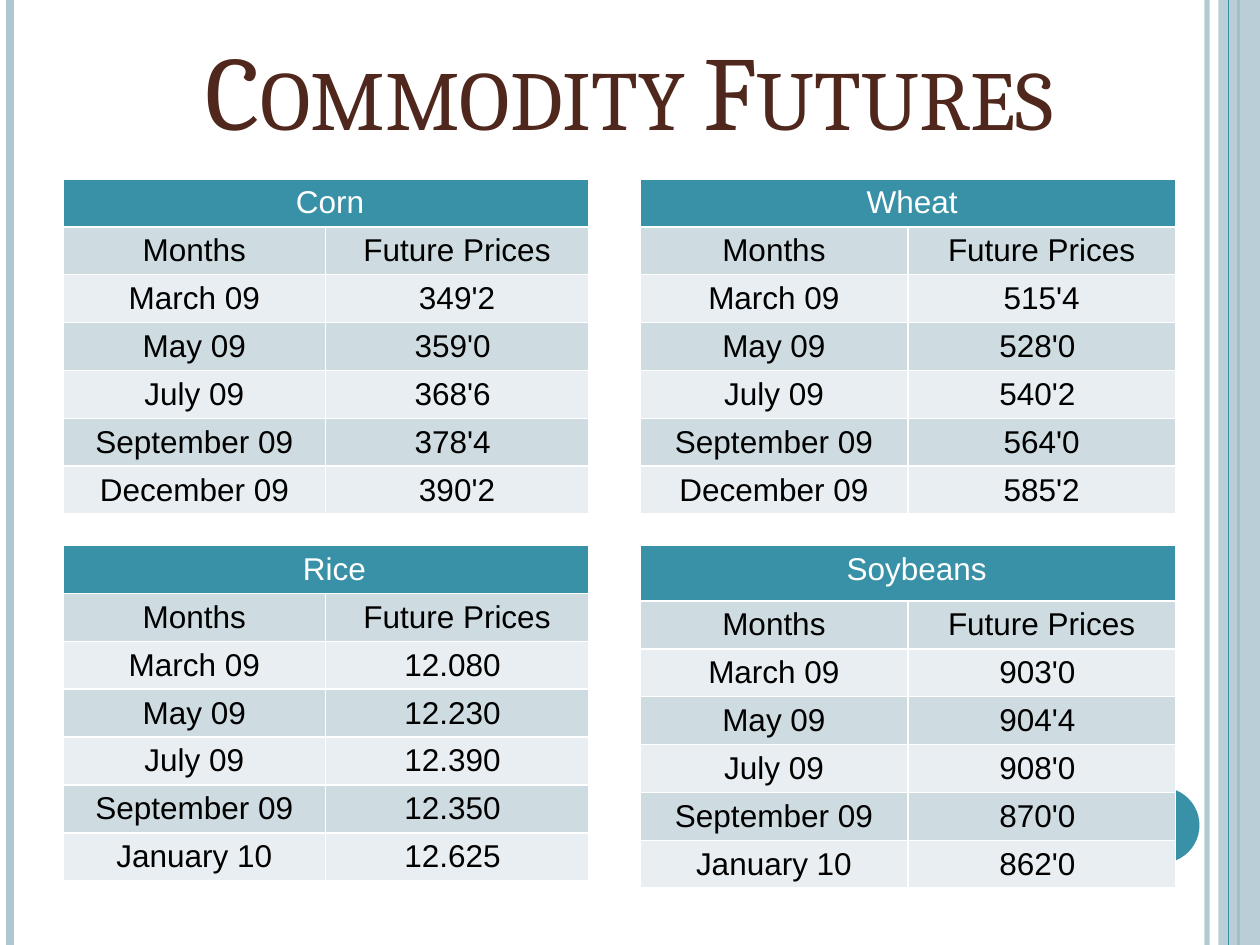
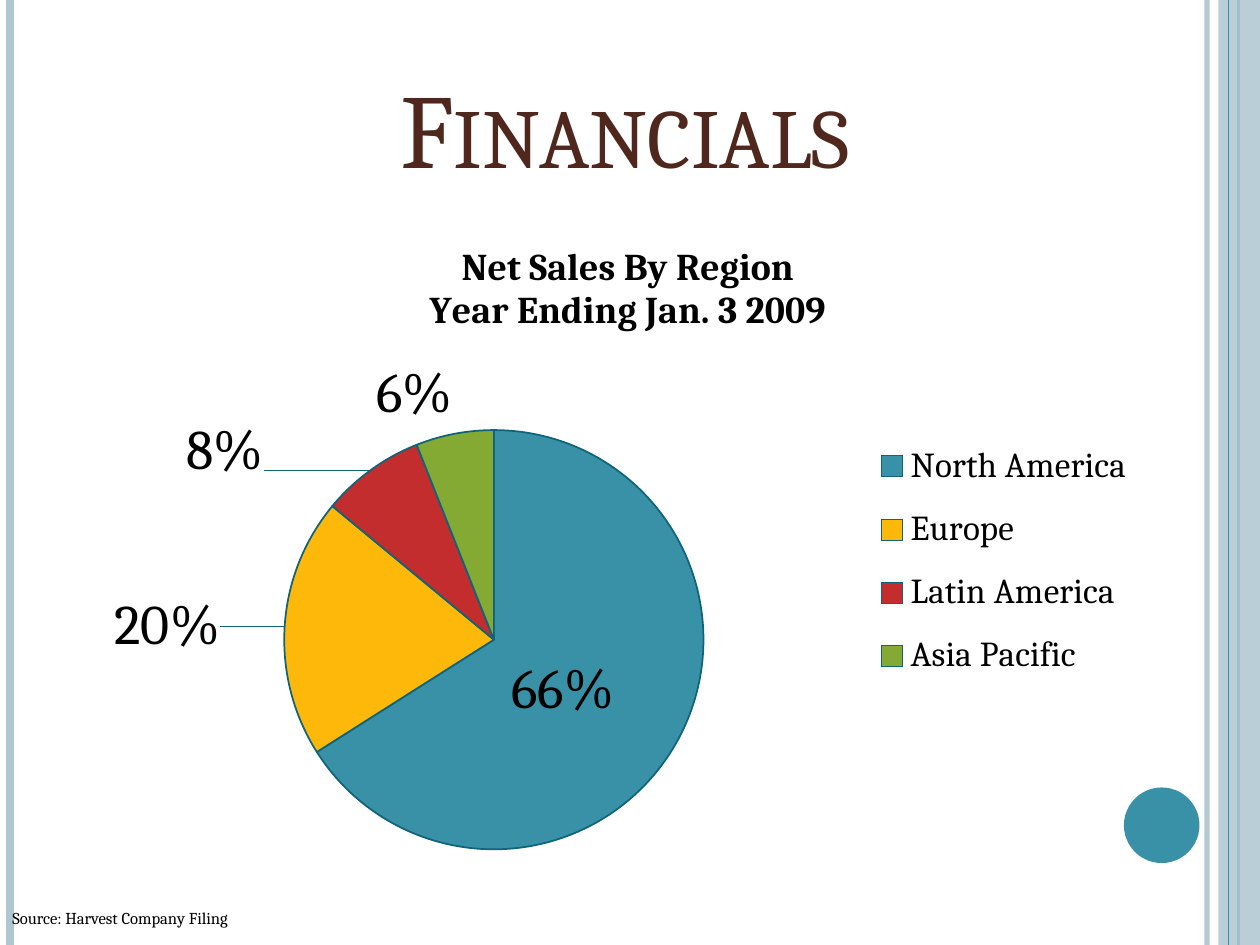
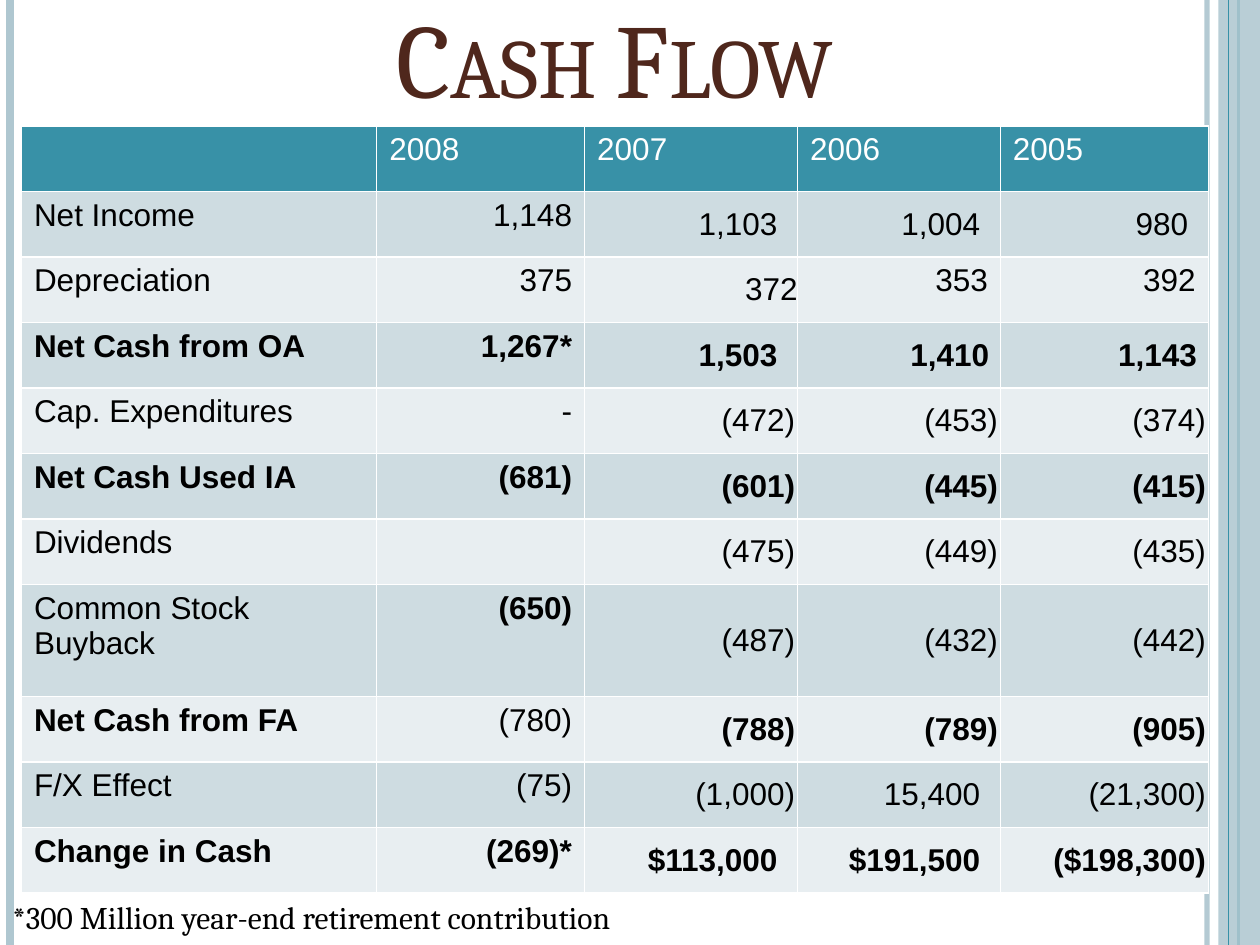
from pptx import Presentation
from pptx.chart.data import CategoryChartData
from pptx.dml.color import RGBColor
from pptx.enum.chart import XL_CHART_TYPE, XL_LABEL_POSITION, XL_LEGEND_POSITION
from pptx.enum.shapes import MSO_CONNECTOR, MSO_SHAPE
from pptx.enum.text import MSO_ANCHOR, PP_ALIGN
from pptx.oxml.ns import qn
from pptx.util import Inches, Pt
from lxml.etree import SubElement

TEAL = RGBColor(0x38, 0x91, 0xA7)
DARK_TEAL = RGBColor(0x0F, 0x64, 0x7A)
PALE_BLUE = RGBColor(0xAF, 0xC7, 0xD0)
BROWN = RGBColor(0x4F, 0x27, 0x1C)
BLACK = RGBColor(0, 0, 0)
WHITE = RGBColor(0xFF, 0xFF, 0xFF)
BANDS = (RGBColor(0xE8, 0xEE, 0xF1), RGBColor(0xCE, 0xDC, 0xE1))
REGION_COLORS = (
    TEAL,
    RGBColor(0xFE, 0xB8, 0x0A),
    RGBColor(0xC3, 0x2D, 0x2E),
    RGBColor(0x84, 0xAA, 0x33),
)

TITLE_FONT = {"name": "Cambria", "size": Pt(60)}
CHART_FONT = {"name": "Cambria", "size": Pt(18)}
CELL_FONT = {"name": "Arial", "size": Pt(18)}
EDGE_LINES = ((9.58, PALE_BLUE, 3, 93), (0.08, PALE_BLUE, 4.5, 100), (9.83, TEAL, 1.5, 100))
ROW_HEIGHT = 0.38

MONTHS = ["March 09", "May 09", "July 09", "September 09"]
COMMODITIES = (
    ("Corn", 0.5, 1.42, 4.17, 0.07, ROW_HEIGHT, "December 09",
     ["349'2", "359'0 ", "368'6 ", "378'4 ", "390'2"]),
    ("Wheat", 5.08, 1.42, 4.25, 0.07, ROW_HEIGHT, "December 09",
     ["515'4", "528'0 ", "540'2 ", "564'0", "585'2"]),
    ("Rice", 0.5, 4.33, 4.17, 0.14, ROW_HEIGHT, "January 10",
     ["12.080 ", "12.230 ", "12.390 ", "12.350 ", "12.625 "]),
    ("Soybeans", 5.08, 4.33, 4.25, 0.14, 0.44, "January 10",
     ["903'0 ", "904'4 ", "908'0 ", "870'0 ", "862'0 "]),
)

CASH_FLOW = (
    ("", "2008", "2007", "2006", "2005"),
    ("Net Income", "1,148", "1,103", "1,004", "980"),
    ("Depreciation", "375", "372", "353", "392"),
    ("Net Cash from OA", "1,267*", "1,503", "1,410", "1,143"),
    ("Cap. Expenditures", "-", "(472)", "(453)", "(374)"),
    ("Net Cash Used IA", "(681)", "(601)", "(445)", "(415)"),
    ("Dividends", "", "(475)", "(449)", "(435)"),
    ("Common Stock Buyback", "(650)", "(487)", "(432)", "(442)"),
    ("Net Cash from FA", "(780)", "(788)", "(789)", "(905)"),
    ("F/X Effect", "(75)", "(1,000)", "15,400", "(21,300)"),
    ("Change in Cash", "(269)*", "$113,000", "$191,500", "($198,300)"),
)
BOLD_EXCEPTIONS = {"(650)": True, "(780)": False}
RIGHT_MARGINS = {"372": 0, "353": 0.1, "392": 0.1, "1,410": 0.09, "1,143": 0.09}
TOP_ANCHORED = ("353", "392")


def apply_format(target, values):
    for name, value in values.items():
        setattr(target, name, value)


def style_font(font, values, color=BLACK):
    apply_format(font, values)
    font.color.rgb = color


def set_alpha(color_parent, percent):
    for color in color_parent.iter(qn("a:srgbClr")):
        SubElement(color, qn("a:alpha"), val=str(percent * 1000))


def add_vertical_line(slide, left, color, width, opacity):
    line = slide.shapes.add_connector(
        MSO_CONNECTOR.STRAIGHT, Inches(left), 0, Inches(left), Inches(7.5))
    line.line.color.rgb = color
    line.line.width = Pt(width)
    if opacity < 100:
        set_alpha(line._element.spPr, opacity)
    SubElement(line._element.spPr, qn("a:effectLst"))


def add_filled_shape(slide, kind, box, color):
    shape = slide.shapes.add_shape(kind, *map(Inches, box))
    shape.shadow.inherit = False
    shape.fill.solid()
    shape.fill.fore_color.rgb = color
    shape.line.fill.background()
    return shape


def add_text(slide, text, box, font, color=BLACK, align=PP_ALIGN.LEFT, anchor=MSO_ANCHOR.TOP):
    frame = slide.shapes.add_textbox(*map(Inches, box)).text_frame
    apply_format(frame, {"word_wrap": True, "vertical_anchor": anchor})
    paragraph = frame.paragraphs[0]
    paragraph.alignment = align
    run = paragraph.add_run()
    run.text = text
    style_font(run.font, font, color)
    return run


def add_framed_slide(presentation, title, title_box):
    slide = presentation.slides.add_slide(presentation.slide_layouts[6])
    for edge_line in EDGE_LINES:
        add_vertical_line(slide, *edge_line)
    band = add_filled_shape(slide, MSO_SHAPE.RECTANGLE, (9.67, 0, 0.33, 7.5), PALE_BLUE)
    set_alpha(band._element.spPr, 87)
    add_vertical_line(slide, 9.75, TEAL, 0.75, 100)
    add_filled_shape(slide, MSO_SHAPE.OVAL, (8.92, 6.25, 0.6, 0.6), TEAL)
    run = add_text(slide, title, title_box, TITLE_FONT, BROWN, PP_ALIGN.CENTER, MSO_ANCHOR.BOTTOM)
    run.font._element.set("cap", "small")
    return slide


def set_cell_borders(cell):
    properties = cell._tc.get_or_add_tcPr()
    for index, side in enumerate(("lnL", "lnR", "lnT", "lnB")):
        border = properties.makeelement(qn(f"a:{side}"), {"w": str(Pt(1))})
        fill = SubElement(border, qn("a:solidFill"))
        SubElement(fill, qn("a:srgbClr"), val=str(WHITE))
        properties.insert(index, border)


def fill_cell(cell, text, row, align, bold=False):
    cell.fill.solid()
    cell.fill.fore_color.rgb = BANDS[row % 2] if row else TEAL
    cell.margin_bottom = Inches(0.01)
    set_cell_borders(cell)
    paragraph = cell.text_frame.paragraphs[0]
    paragraph.alignment = align
    apply_format(paragraph.font, CELL_FONT)
    if text:
        run = paragraph.add_run()
        run.text = text
        style_font(run.font, {**CELL_FONT, "bold": bold}, BLACK if row else WHITE)


def add_table(slide, left, top, widths, heights):
    table = slide.shapes.add_table(
        len(heights), len(widths), Inches(left), Inches(top),
        Inches(sum(widths)), Inches(sum(heights))).table
    for column, width in zip(table.columns, widths):
        column.width = Inches(width)
    for row, height in zip(table.rows, heights):
        row.height = Inches(height)
    return table


def add_commodity_table(slide, name, left, top, width, indent, header_height, last_month, prices):
    rows = [(name, ""), ("Months", "Future Prices"), *zip(MONTHS + [last_month], prices)]
    heights = [header_height] + [ROW_HEIGHT] * (len(rows) - 1)
    table = add_table(slide, left, top, [width / 2] * 2, heights)
    for row, texts in enumerate(rows):
        for column, text in enumerate(texts):
            fill_cell(table.cell(row, column), text, row, PP_ALIGN.CENTER)
    header = table.cell(0, 0)
    header.merge(table.cell(0, 1))
    header.margin_left = Inches(0.1 + indent)


def add_cash_flow_table(slide):
    heights = [0.89 if row[0] == "Common Stock Buyback" else 0.52 for row in CASH_FLOW]
    table = add_table(slide, 0.17, 1, (2.82, 1.65, 1.69, 1.61, 1.65), heights)
    for row, texts in enumerate(CASH_FLOW):
        row_is_bold = texts[0].startswith(("Net Cash", "Change"))
        for column, text in enumerate(texts):
            cell = table.cell(row, column)
            align = PP_ALIGN.RIGHT if row and column else PP_ALIGN.LEFT
            fill_cell(cell, text, row, align, BOLD_EXCEPTIONS.get(text, row_is_bold))
            if row and column > 1:
                margin = RIGHT_MARGINS.get(text, 0.02 if text.endswith(")") else 0.16)
                cell.margin_right = Inches(margin)
                if text not in TOP_ANCHORED:
                    apply_format(cell, {
                        "vertical_anchor": MSO_ANCHOR.MIDDLE,
                        "margin_left": Inches(0.02),
                        "margin_top": Inches(0.02),
                        "margin_bottom": Inches(0.02),
                    })


def set_layout(parent, index, values, absolute=True):
    for layout in parent.findall(qn("c:layout")):
        parent.remove(layout)
    layout = parent.makeelement(qn("c:layout"), {})
    parent.insert(index, layout)
    manual = SubElement(layout, qn("c:manualLayout"))
    if parent.tag == qn("c:plotArea"):
        SubElement(manual, qn("c:layoutTarget"), val="inner")
    if absolute:
        for mode in ("xMode", "yMode"):
            SubElement(manual, qn(f"c:{mode}"), val="edge")
    for name, value in zip("xywh", values):
        SubElement(manual, qn(f"c:{name}"), val=str(value))


def style_chart_title(chart):
    frame = chart.chart_title.text_frame
    frame.text = "Net Sales By Region\nYear Ending Jan. 3 2009"
    for paragraph in frame.paragraphs:
        style_font(paragraph.runs[0].font, {**CHART_FONT, "size": Pt(21.6), "bold": True})
    set_layout(chart.chart_title._element, 1, (0.32, 0.03))


def style_slices(series):
    series.format.line.color.rgb = DARK_TEAL
    for index, color in enumerate(REGION_COLORS):
        slice_format = series.points[index].format
        slice_format.fill.solid()
        slice_format.fill.fore_color.rgb = color
        slice_format.line.color.rgb = DARK_TEAL
        slice_format.line.width = Pt(1)


def style_labels(series):
    label_font = {**CHART_FONT, "size": Pt(32)}
    apply_format(series.data_labels, {
        "show_value": False,
        "show_percentage": True,
        "number_format": "0%",
        "number_format_is_linked": False,
        "position": XL_LABEL_POSITION.OUTSIDE_END,
    })
    style_font(series.data_labels.font, label_font)
    offsets = ((-0.02, 0), (-0.05, 0), (-0.09, 0.03))
    for index, offset in enumerate(offsets):
        label = series.points[index].data_label
        label.position = XL_LABEL_POSITION.OUTSIDE_END if index else XL_LABEL_POSITION.CENTER
        style_font(label.font, label_font)
    for element, offset in zip(series._element.iter(qn("c:dLbl")), offsets):
        element.find(qn("c:showVal")).set("val", "0")
        element.find(qn("c:showPercent")).set("val", "1")
        set_layout(element, 1, offset, absolute=False)


def add_region_chart(slide):
    data = CategoryChartData()
    data.categories = ["North America", "Europe", "Latin America", "Asia Pacific"]
    data.add_series("Series 1", (66, 20, 8, 6))
    chart = slide.shapes.add_chart(
        XL_CHART_TYPE.PIE, Inches(0.5), Inches(1.75), Inches(9), Inches(5.2), data).chart
    style_font(chart.font, CHART_FONT)
    style_chart_title(chart)
    chart.has_legend = True
    apply_format(chart.legend, {"position": XL_LEGEND_POSITION.RIGHT, "include_in_layout": False})
    style_font(chart.legend.font, {**CHART_FONT, "size": Pt(20)})
    set_layout(chart.legend._element, 1, (0.7, 0.31, 0.26, 0.42))
    set_layout(chart._chartSpace.chart.plotArea, 0, (0.19, 0.32, 0.38, 0.64))
    plot = chart.plots[0]
    plot.vary_by_categories = True
    style_slices(plot.series[0])
    style_labels(plot.series[0])


def main():
    presentation = Presentation()
    apply_format(presentation, {"slide_width": Inches(10), "slide_height": Inches(7.5)})

    futures = add_framed_slide(presentation, "Commodity Futures", (0.5, 0, 9, 1.25))
    for commodity in COMMODITIES:
        add_commodity_table(futures, *commodity)

    financials = add_framed_slide(presentation, "Financials", (0.5, 0.3, 8.92, 1.25))
    add_region_chart(financials)
    add_text(financials, "Source: Harvest Company Filing", (0, 7.16, 2.33, 0.26),
             {"name": "Cambria", "size": Pt(9.5)})

    cash_flow = add_framed_slide(presentation, "Cash Flow", (0.17, 0, 9.42, 1))
    add_cash_flow_table(cash_flow)
    add_text(cash_flow, "*300 Million year-end retirement contribution",
             (0, 7.08, 8.75, 0.42), CHART_FONT)

    presentation.save("out.pptx")


if __name__ == "__main__":
    main()
